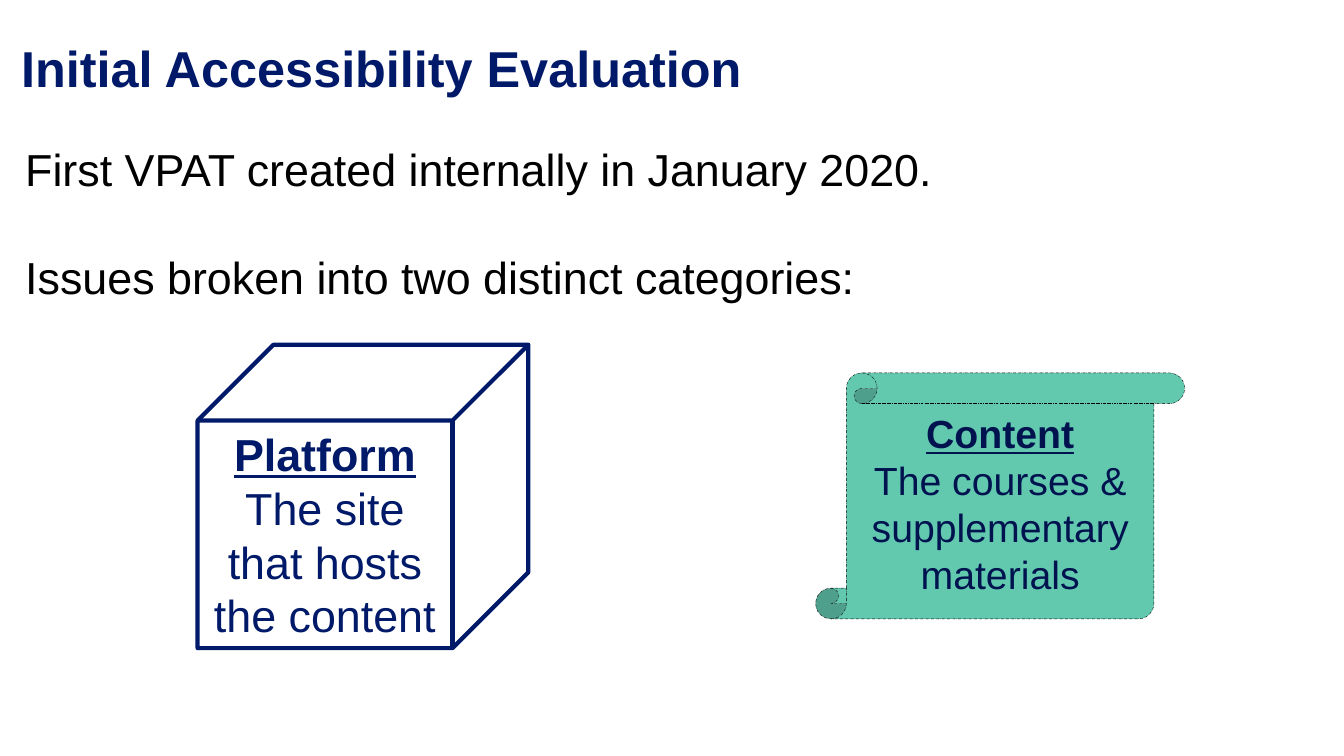
"""Build the slide on the initial accessibility evaluation."""
from dataclasses import dataclass

import pptx
import pptx.dml.color
import pptx.enum.dml
import pptx.enum.shapes
import pptx.enum.text
import pptx.util
from pptx.util import Inches

NAVY = "001A69"
Box = tuple[float, float, float, float]


@dataclass
class Category:
    """A kind of issue, drawn as a labelled shape."""
    heading: str
    description: str
    preset: pptx.enum.shapes.MSO_SHAPE
    box: Box
    text_size: int
    text_color: str
    line_color: str
    line_width: float
    fill_color: str | None = None
    dash: pptx.enum.dml.MSO_LINE | None = None


CATEGORIES = [
    Category("Platform", "The site that hosts the content", pptx.enum.shapes.MSO_SHAPE.CUBE,
             (1.96, 3.42, 3.28, 3.01), 32, NAVY, NAVY, 3),
    Category("Content", "The courses & supplementary materials",
             pptx.enum.shapes.MSO_SHAPE.VERTICAL_SCROLL, (8.09, 3.7, 3.66, 2.44), 28,
             "00134F", "000000", 0.25, "62C9AF", pptx.enum.dml.MSO_LINE.LONG_DASH_DOT),
]


def rgb(color: str) -> pptx.dml.color.RGBColor:
    """Turn a hex string into a colour."""
    return pptx.dml.color.RGBColor.from_string(color)


def place(shape, box: Box) -> None:
    """Move and size a shape."""
    shape.left, shape.top, shape.width, shape.height = map(Inches, box)


def set_insets(text_frame, inset: float) -> None:
    """Give a text frame the same inset on all sides."""
    text_frame.margin_left = text_frame.margin_right = Inches(inset)
    text_frame.margin_top = text_frame.margin_bottom = Inches(inset)


def format_paragraph(paragraph, size: int, color: str, bold: bool = False,
                     underline: bool = False, centred: bool = False) -> None:
    """Set alignment, spacing and the font of every run."""
    align = pptx.enum.text.PP_ALIGN
    paragraph.alignment = align.CENTER if centred else align.LEFT
    paragraph.space_before = pptx.util.Pt(0)
    paragraph.line_spacing = 1.0
    for run in paragraph.runs:
        run.font.name = "Arial"
        run.font.size = pptx.util.Pt(size)
        run.font.bold = bold
        run.font.underline = underline
        run.font.color.rgb = rgb(color)


def fill_title(title) -> None:
    """Write the slide title."""
    place(title, (0.15, 0.42, 12.28, 0.6))
    text_frame = title.text_frame
    text_frame.text = "Initial Accessibility Evaluation"
    text_frame.vertical_anchor = pptx.enum.text.MSO_ANCHOR.TOP
    text_frame.auto_size = pptx.enum.text.MSO_AUTO_SIZE.NONE
    set_insets(text_frame, 0.06)
    format_paragraph(text_frame.paragraphs[0], 36, NAVY, bold=True)
    text_frame.paragraphs[0].line_spacing = 0.8


def fill_body(body) -> None:
    """Write the two statements without bullets."""
    place(body, (0.15, 1.35, 12.97, 1.72))
    text_frame = body.text_frame
    text_frame.text = ("First VPAT created internally in January 2020.\n"
                       "Issues broken into two distinct categories:")
    text_frame.vertical_anchor = pptx.enum.text.MSO_ANCHOR.MIDDLE
    text_frame.auto_size = pptx.enum.text.MSO_AUTO_SIZE.NONE
    for paragraph in text_frame.paragraphs:
        format_paragraph(paragraph, 32, "000000")
        properties = paragraph._p.get_or_add_pPr()
        properties.set("marL", "0")
        properties.set("indent", "0")
        properties.append(pptx.oxml.parse_xml(
            '<a:buNone xmlns:a="http://schemas.openxmlformats.org/drawingml/2006/main"/>'))
    text_frame.paragraphs[1].space_before = pptx.util.Pt(38.5)


def draw_category(slide, category: Category) -> None:
    """Draw one category with its heading and description."""
    shape = slide.shapes.add_shape(category.preset, *map(Inches, category.box))
    shape.shadow.inherit = False
    if category.fill_color:
        shape.fill.solid()
        shape.fill.fore_color.rgb = rgb(category.fill_color)
    else:
        shape.fill.background()
    shape.line.color.rgb = rgb(category.line_color)
    shape.line.width = pptx.util.Pt(category.line_width)
    if category.dash is not None:
        shape.line.dash_style = category.dash
    text_frame = shape.text_frame
    text_frame.text = f"{category.heading}\n{category.description}"
    text_frame.word_wrap = True
    text_frame.vertical_anchor = pptx.enum.text.MSO_ANCHOR.MIDDLE
    set_insets(text_frame, 0.06)
    for index, paragraph in enumerate(text_frame.paragraphs):
        is_heading = index == 0
        format_paragraph(paragraph, category.text_size, category.text_color,
                         bold=is_heading, underline=is_heading, centred=True)


def main() -> None:
    """Build and save the presentation."""
    presentation = pptx.Presentation()
    presentation.slide_width = Inches(13.33)
    presentation.slide_height = Inches(7.5)
    slide = presentation.slides.add_slide(presentation.slide_layouts[1])
    fill_title(slide.shapes.title)
    fill_body(slide.placeholders[1])
    for category in CATEGORIES:
        draw_category(slide, category)
    presentation.save("out.pptx")


if __name__ == "__main__":
    main()
